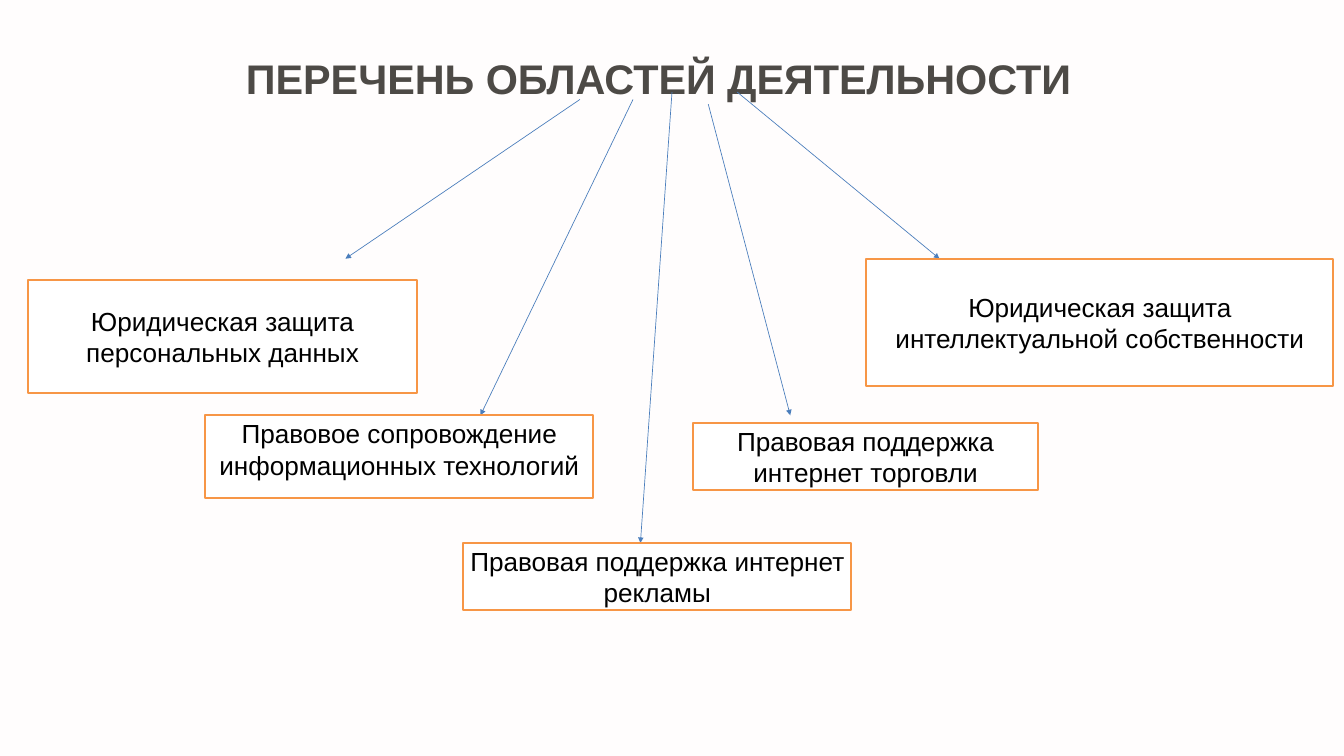
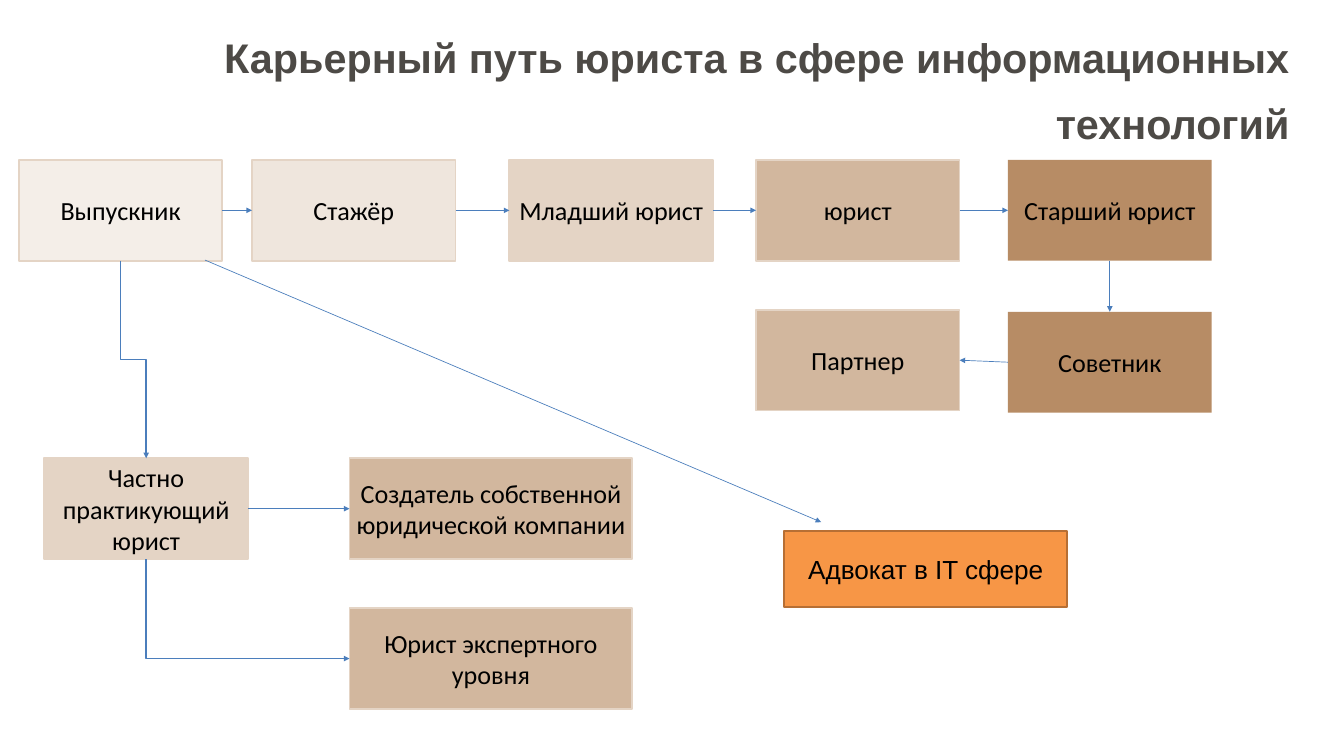
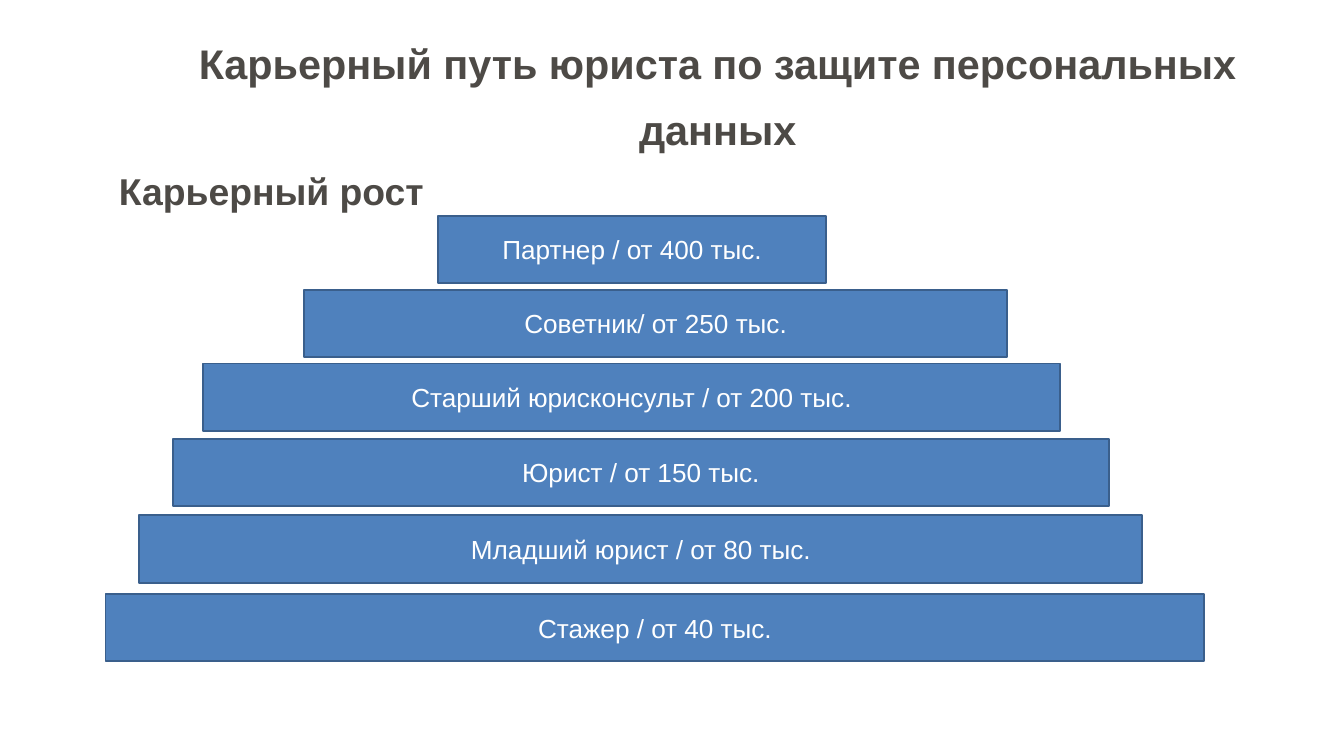
from dataclasses import dataclass

from lxml import etree
from pptx import Presentation
from pptx import util as u
from pptx.dml import color
from pptx.enum import shapes, text
from pptx.oxml import ns


@dataclass(frozen=True)
class Theme:
    heading: str = "4D4A46"
    dark: str = "000000"
    white: str = "FFFFFF"
    paper: str = "FFFDFD"
    arrow: str = "4B7EBC"
    orange: str = "F79646"
    orange_edge: str = "B76F34"
    blue: str = "4F81BD"
    blue_edge: str = "3A5F8C"
    sand_edge: str = "E4D4C5"
    sands: tuple = ("F4EEE8", "EFE6DD", "E4D4C5", "D2B79E", "B78C65")
    font: str = "Arial"
    flow_font: str = "Calibri"
    title_size: float = 44.3
    subtitle_size: float = 40
    body_size: float = 28
    title_spacing: float = 1.33
    border: float = 2
    thin: float = 0.75
    thick: float = 1.5


THEME = Theme()
TOP, LEFT, BOTTOM, RIGHT = range(4)  # connection sites of a rectangle


@dataclass(frozen=True)
class Box:
    """An area of the page, in inches."""
    left: float
    top: float
    width: float
    height: float

    def inside(self, left, top, width, height):
        return Box(self.left + left, self.top + top, width, height)

    def point(self, across, down):
        return u.Inches(self.left + across), u.Inches(self.top + down)

    def lengths(self):
        return [u.Inches(n) for n in (self.left, self.top, self.width, self.height)]


def rgb(value):
    return color.RGBColor.from_string(value)


def add_span(para, words, size, tint, font=THEME.font, bold=False):
    span = para.add_run()
    span.text = words
    span.font.size = u.Pt(size)
    span.font.name = font
    span.font.bold = bold
    span.font.color.rgb = rgb(tint)


def add_page(deck, background=THEME.white):
    page = deck.slides.add_slide(deck.slide_layouts[6])
    page.background.fill.solid()
    page.background.fill.fore_color.rgb = rgb(background)
    return page


def add_title(page, box, lines):
    """Write (words, size, alignment) lines in the heading style."""
    frame = page.shapes.add_textbox(*box.lengths()).text_frame
    frame.word_wrap = True
    frame.auto_size = text.MSO_AUTO_SIZE.SHAPE_TO_FIT_TEXT
    frame.margin_left = frame.margin_right = frame.margin_top = frame.margin_bottom = 0
    for index, (words, size, align) in enumerate(lines):
        para = frame.add_paragraph() if index else frame.paragraphs[0]
        para.alignment = align
        para.line_spacing = THEME.title_spacing
        add_span(para, words, size, THEME.heading, bold=True)


def add_card(page, box, words, fill, edge=None, tint=THEME.dark, font=THEME.font):
    card = page.shapes.add_shape(shapes.MSO_SHAPE.RECTANGLE, *box.lengths())
    card.shadow.inherit = False
    card.fill.solid()
    card.fill.fore_color.rgb = rgb(fill)
    if edge:
        card.line.color.rgb = rgb(edge)
        card.line.width = u.Pt(THEME.border)
    else:
        card.line.fill.background()
    frame = card.text_frame
    frame.word_wrap = True
    frame.vertical_anchor = text.MSO_ANCHOR.MIDDLE
    para = frame.paragraphs[0]
    para.alignment = text.PP_ALIGN.CENTER
    add_span(para, words, THEME.body_size, tint, font)
    return card


def add_arrow(page, start, end, width=THEME.thin, kind=shapes.MSO_CONNECTOR.STRAIGHT):
    arrow = page.shapes.add_connector(kind, *start, *end)
    arrow.line.color.rgb = rgb(THEME.arrow)
    arrow.line.width = u.Pt(width)
    etree.SubElement(arrow.line._get_or_add_ln(), ns.qn("a:tailEnd"), type="triangle")
    etree.SubElement(arrow._element.spPr, ns.qn("a:effectLst"))
    return arrow


def link(page, source, source_site, target, target_site, width=THEME.thin):
    arrow = add_arrow(page, (0, 0), (0, 0), width)
    arrow.begin_connect(source, source_site)
    arrow.end_connect(target, target_site)


def add_down_elbow(page, start, end, preset):
    """Bent arrow that leaves downwards: a sideways elbow, mirrored and turned by 270 degrees."""
    middle_x, middle_y = (start[0] + end[0]) // 2, (start[1] + end[1]) // 2
    half_run, half_rise = (end[1] - start[1]) // 2, (end[0] - start[0]) // 2
    arrow = add_arrow(page, (middle_x + half_run, middle_y - half_rise),
                      (middle_x - half_run, middle_y + half_rise),
                      THEME.thick, shapes.MSO_CONNECTOR.ELBOW)
    properties = arrow._element.spPr
    properties.find(ns.qn("a:xfrm")).set("rot", str(270 * 60000))
    properties.find(ns.qn("a:prstGeom")).set("prst", preset)


def draw_practice_areas(page, box):
    arrows = [
        ((8.21, 0.11), (4.72, 2.48)),
        ((9, 0.11), (6.73, 4.81)),
        ((9.58, 0), (9.11, 6.71)),
        ((10.12, 0.18), (11.34, 4.81)),
        ((10.55, 0), (13.56, 2.48)),
    ]
    for start, end in arrows:
        add_arrow(page, box.point(*start), box.point(*end))

    def area(words, *place):
        return add_card(page, box.inside(*place), words, THEME.white, THEME.orange)

    area("Юридическая защита персональных данных", 0, 2.8, 5.78, 1.68)
    area("Юридическая защита интеллектуальной собственности", 12.47, 2.48, 6.95, 1.9)
    technology = area("Правовое сопровождение информационных технологий", 2.63, 4.81, 5.78, 1.23)
    technology.text_frame.margin_bottom = u.Inches(0.27)
    area("Правовая поддержка интернет рекламы", 6.47, 6.71, 5.78, 1)
    area("Правовая поддержка интернет торговли", 9.89, 4.92, 5.14, 1)


def draw_career_flow(page, box):
    narrow, wide, height = 3.03, 4.21, 1.5
    palest, pale, light, medium, deep = THEME.sands

    def step(words, left, top, fill, width=narrow):
        edge = None if fill == deep else THEME.sand_edge
        return add_card(page, box.inside(left, top, width, height), words, fill, edge,
                        font=THEME.flow_font)

    graduate = step("Выпускник", 0, 0, palest)
    trainee = step("Стажёр", 3.47, 0, pale)
    junior = step("Младший юрист", 7.3, 0, light)
    lawyer = step("юрист", 10.97, 0, medium)
    senior = step("Старший юрист", 14.72, 0, deep)
    adviser = step("Советник", 14.72, 2.26, deep)
    partner = step("Партнер", 10.97, 2.23, medium)
    private = step("Частно практикующий юрист", 0.38, 4.44, light)
    founder = step("Создатель собственной юридической компании", 4.92, 4.44, medium, wide)
    step("Юрист экспертного уровня", 4.92, 6.67, medium, wide)
    add_card(page, box.inside(11.39, 5.52, wide, 1.13), "Адвокат в IT сфере",
             THEME.orange, THEME.orange_edge)

    for source, target in ((graduate, trainee), (trainee, junior), (junior, lawyer),
                           (private, founder)):
        link(page, source, RIGHT, target, LEFT, THEME.thick)
    link(page, lawyer, RIGHT, senior, LEFT)
    link(page, senior, BOTTOM, adviser, TOP)
    link(page, adviser, LEFT, partner, RIGHT)
    add_arrow(page, box.point(2.77, 1.49), box.point(11.94, 5.39))
    add_down_elbow(page, box.point(narrow / 2, height),
                   box.point(0.38 + narrow / 2, 4.44), "bentConnector3")
    add_down_elbow(page, box.point(0.38 + narrow / 2, 4.44 + height),
                   box.point(4.92, 6.67 + height / 2), "bentConnector2")


def draw_salary_pyramid(page, box):
    levels = [
        ("Партнер / от 400 тыс.", 4.95, 0, 5.77),
        ("Советник/ от 250 тыс.", 2.95, 1.1, 10.47),
        ("Старший юрисконсульт / от 200 тыс.", 1.45, 2.2, 12.75),
        ("Юрист / от 150 тыс.", 1, 3.32, 13.93),
        ("Младший юрист / от 80 тыс.", 0.5, 4.46, 14.93),
        ("Стажер / от 40 тыс.", 0, 5.63, box.width),
    ]
    for words, left, top, width in levels:
        add_card(page, box.inside(left, top, width, 1), words,
                 THEME.blue, THEME.blue_edge, THEME.white)


def main():
    deck = Presentation()
    deck.slide_width, deck.slide_height = u.Inches(20), u.Inches(11.25)
    align = text.PP_ALIGN

    areas = add_page(deck, THEME.paper)
    add_title(areas, Box(3.66, 0.55, 15.98, 0.99),
              [("ПЕРЕЧЕНЬ ОБЛАСТЕЙ ДЕЯТЕЛЬНОСТИ", THEME.title_size, align.LEFT)])
    draw_practice_areas(areas, Box(0.42, 1.37, 19.42, 7.71))

    flow = add_page(deck)
    add_title(flow, Box(0.28, 0.24, 18.91, 1.99),
              [("Карьерный путь юриста в сфере информационных технологий",
                THEME.title_size, align.RIGHT)])
    draw_career_flow(flow, Box(0.28, 2.38, 17.75, 8.17))

    growth = add_page(deck)
    add_title(growth, Box(1.77, 0.32, 17.82, 2.88),
              [("Карьерный путь юриста по защите персональных данных",
                THEME.title_size, align.CENTER),
               ("Карьерный рост", THEME.subtitle_size, align.LEFT)])
    draw_salary_pyramid(growth, Box(1.57, 3.21, 16.35, 6.63))

    deck.save("out.pptx")


if __name__ == "__main__":
    main()
